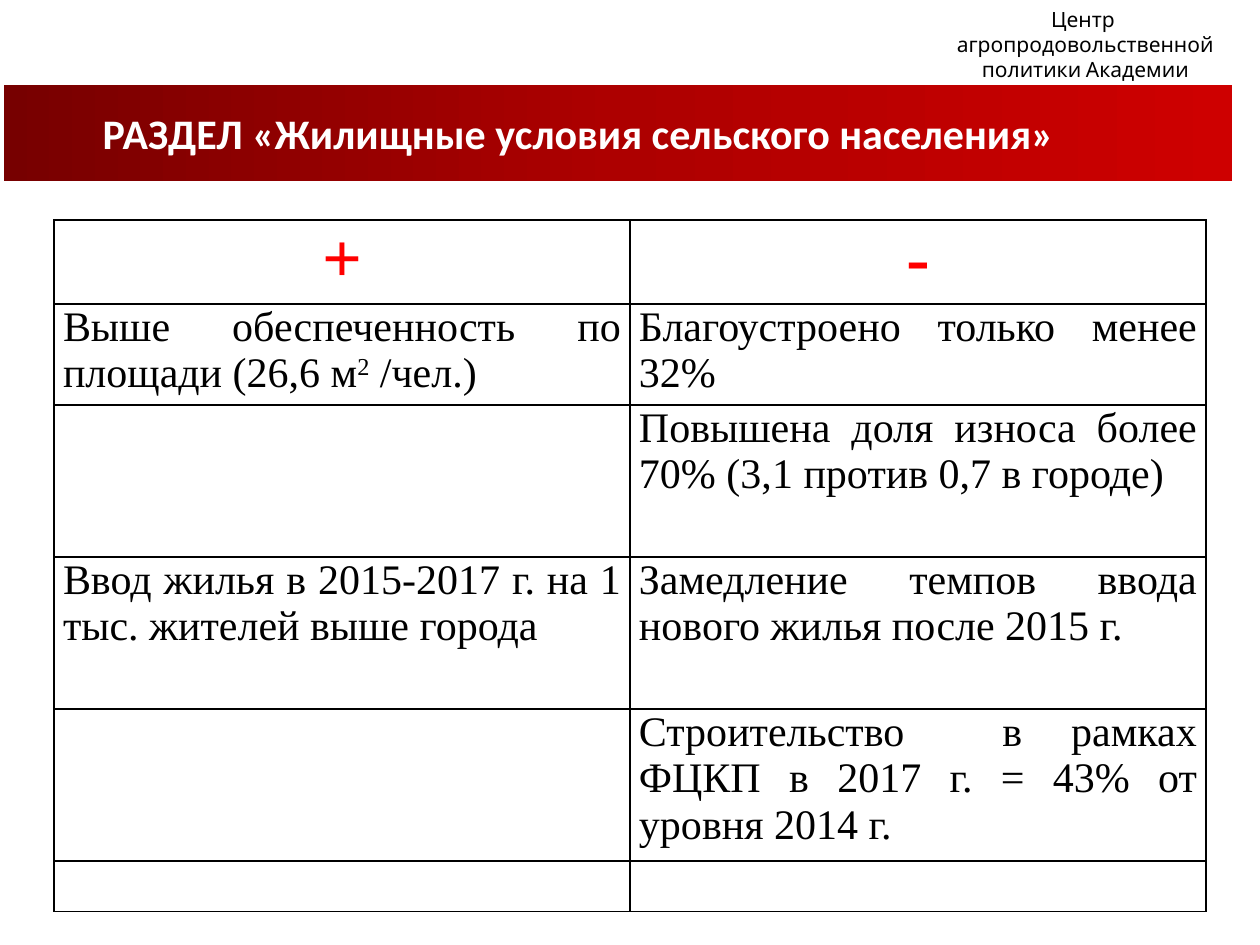
from copy import deepcopy

from lxml.etree import SubElement
from pptx import Presentation
from pptx.dml.color import RGBColor
from pptx.enum.shapes import MSO_SHAPE as Shape
from pptx.enum.text import MSO_ANCHOR as Anchor, PP_ALIGN as Align
from pptx.oxml.ns import qn
from pptx.util import Pt

EMU_PER_PX = 914400 // 126
COLORS = {
    "black": "000000",
    "white": "FFFFFF",
    "sign": "FF0000",
    "band_left": "770000",
    "band_middle": "AD0000",
    "band_right": "CE0000",
}
ROW_HEIGHTS = [50, 101, 152, 152, 152, 50]
ROWS = [
    ("+", "-"),
    (("Выше обеспеченность по площади (26,6 м", "2", " /чел.)"),
     "Благоустроено только менее 32%"),
    ("", "Повышена доля износа более 70% (3,1 против 0,7 в городе)"),
    ("Ввод жилья в 2015-2017 г. на 1 тыс. жителей выше города",
     "Замедление темпов ввода нового жилья после 2015 г."),
    ("", "Строительство  в рамках ФЦКП в 2017 г. = 43% от уровня 2014 г."),
    ("", ""),
]


def px(*lengths):
    return [length * EMU_PER_PX for length in lengths]


def color(name):
    return RGBColor.from_string(COLORS[name])


class SlideBuilder:
    table_font = "Times New Roman"

    def __init__(self, page):
        self.page = page

    def style(self, para, font, size, tint, bold=False, align=Align.CENTER):
        para.alignment = align
        para.font.name = font
        para.font.size = Pt(size)
        para.font.bold = bold
        para.font.color.rgb = color(tint)

    def band(self, box, tints):
        """Draw a rectangle with evenly spaced gradient stops, left to right."""
        band = self.page.shapes.add_shape(Shape.RECTANGLE, *px(*box))
        band.shadow.inherit = False
        band.line.fill.background()
        band.fill.gradient()
        band.fill.gradient_angle = 0
        first_stop = next(band._element.iter(qn("a:gs")))
        for _ in tints[2:]:
            first_stop.addnext(deepcopy(first_stop))
        for index, (stop, tint) in enumerate(zip(band.fill.gradient_stops, tints)):
            stop.color.rgb = color(tint)
            stop.position = index / (len(tints) - 1)

    def text(self, box, words, font, size, tint, bold=False, anchor=Anchor.TOP):
        frame = self.page.shapes.add_textbox(*px(*box)).text_frame
        frame.word_wrap = True
        frame.vertical_anchor = anchor
        frame.text = words
        self.style(frame.paragraphs[0], font, size, tint, bold)

    def borders(self, cell):
        properties = cell._tc.get_or_add_tcPr()
        for side in ("a:lnL", "a:lnR", "a:lnT", "a:lnB"):
            line = SubElement(properties, qn(side), w=str(Pt(1)))
            fill = SubElement(line, qn("a:solidFill"))
            SubElement(fill, qn("a:srgbClr"), val=COLORS["black"])

    def fill_cell(self, cell, content, heading):
        """Write a string, or a (base, superscript, rest) tuple, into a cell."""
        self.borders(cell)
        cell.fill.background()
        if not content:
            return
        cell.margin_left, cell.margin_right = px(9, 9)
        cell.margin_top = cell.margin_bottom = 0
        para = cell.text_frame.paragraphs[0]
        para.space_before = Pt(3)
        pieces = (content,) if isinstance(content, str) else content
        for index, piece in enumerate(pieces):
            span = para.add_run()
            span.text = piece
            if index == 1:
                span._r.get_or_add_rPr().set("baseline", "30000")
        if heading:
            self.style(para, self.table_font, 40, "sign", bold=True)
        else:
            self.style(para, self.table_font, 24, "black", align=Align.JUSTIFY)

    def table(self, left, top, width, heights, rows):
        box = px(left, top, width, sum(heights))
        table = self.page.shapes.add_table(len(rows), len(rows[0]), *box).table
        table.first_row = table.horz_banding = False
        for row, height in zip(table.rows, px(*heights)):
            row.height = height
        for row_index, contents in enumerate(rows):
            for column_index, content in enumerate(contents):
                cell = table.cell(row_index, column_index)
                self.fill_cell(cell, content, heading=row_index == 0)


def main():
    deck = Presentation()
    deck.slide_width, deck.slide_height = px(1260, 945)
    builder = SlideBuilder(deck.slides.add_slide(deck.slide_layouts[6]))
    builder.band((4, 85, 1228, 96), ("band_left", "band_middle", "band_right"))
    builder.text((908, 0, 355, 63),
                 "Центр  агропродовольственной политики Академии",
                 "Cabin", 12, "black")
    builder.text((7, 85, 1143, 96),
                 "РАЗДЕЛ «Жилищные условия сельского населения»",
                 "Calibri", 24, "white", bold=True, anchor=Anchor.MIDDLE)
    builder.table(54, 220, 1152, ROW_HEIGHTS, ROWS)
    deck.save("out.pptx")


if __name__ == "__main__":
    main()
